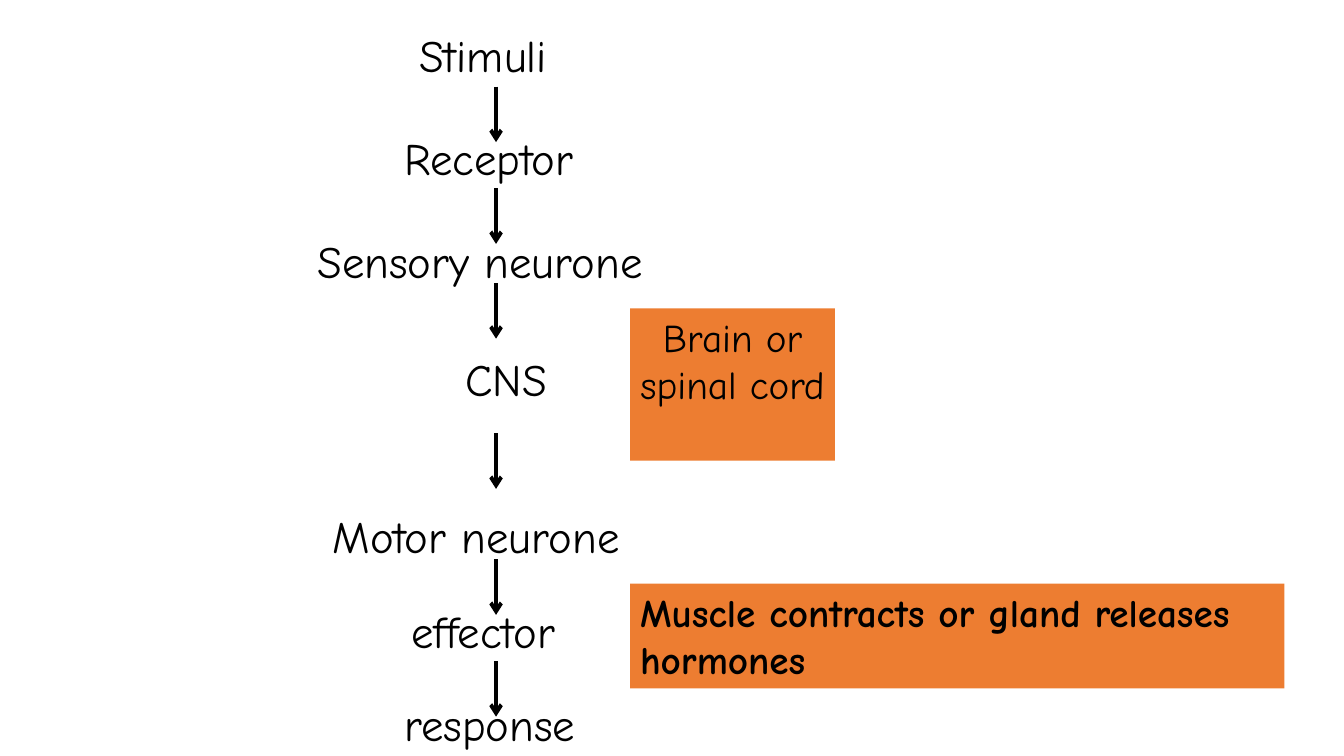
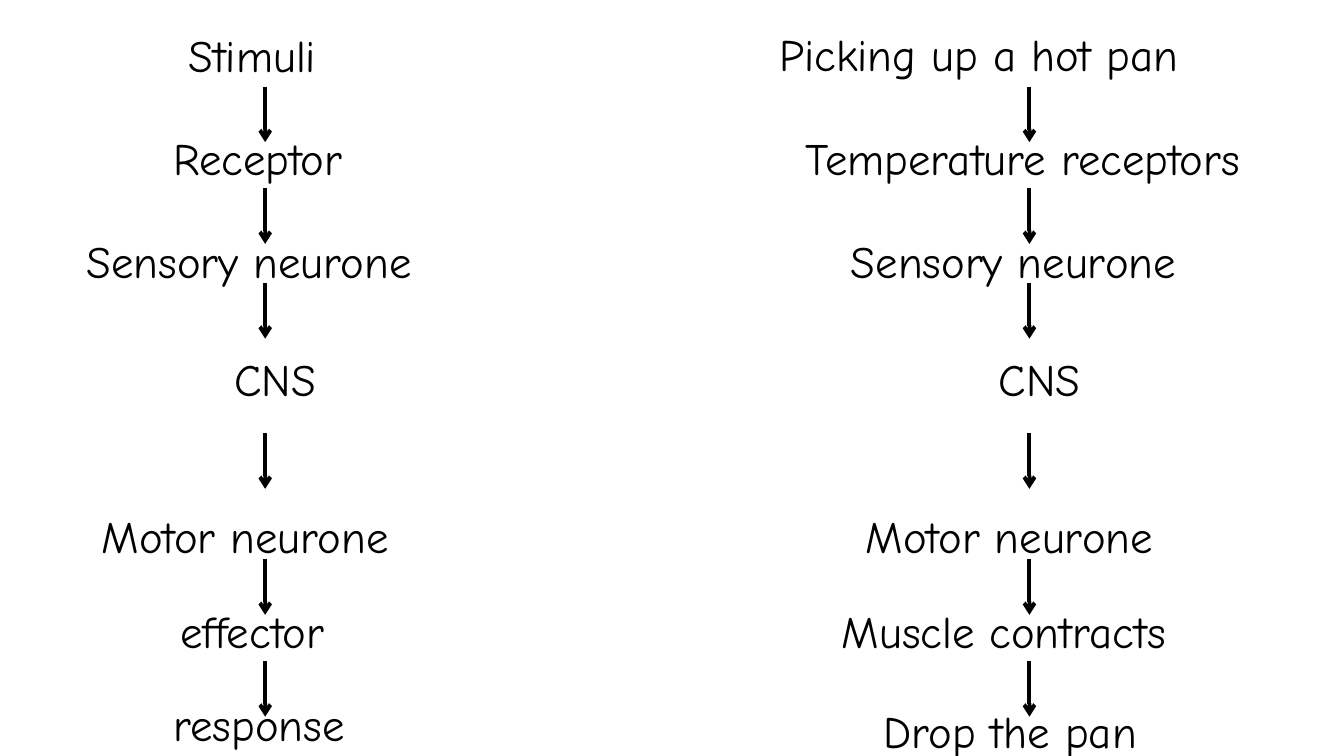
from lxml.etree import SubElement
from pptx import Presentation
from pptx.dml.color import RGBColor
from pptx.enum.shapes import MSO_CONNECTOR, MSO_SHAPE
from pptx.enum.text import MSO_ANCHOR, PP_ALIGN
from pptx.oxml.ns import qn
from pptx.util import Inches, Pt

BLACK = RGBColor(0x00, 0x00, 0x00)
ORANGE = RGBColor(0xED, 0x7D, 0x31)
FONT = "Comic Neue"
BLANK_LAYOUT = 6

STEP_HEIGHT = 0.64
ARROW_LENGTH = 0.55
ARROW_TOPS = (0.86, 1.87, 2.81, 4.3, 5.55, 6.56)

# Each step: text, left relative to the arrow axis, top, width, alignment
SENSORY = ("Sensory neurone", -1.87, 2.27, 4.22, PP_ALIGN.LEFT)
CNS = ("CNS", -2.75, 3.44, 5.7, PP_ALIGN.CENTER)
MOTOR = ("Motor neurone", -1.72, 5, 3.75, PP_ALIGN.LEFT)
REFLEX_STEPS = (
    ("Stimuli", -0.86, 0.23, 1.72, PP_ALIGN.LEFT),
    ("Receptor", -1.01, 1.25, 2.19, PP_ALIGN.LEFT),
    SENSORY,
    CNS,
    MOTOR,
    ("effector", -0.94, 5.94, 2.58, PP_ALIGN.LEFT),
    ("response", -1.01, 6.86, 2.73, PP_ALIGN.LEFT),
)
HOT_PAN_STEPS = (
    ("Picking up a hot pan", -2.58, 0.22, 5.15, PP_ALIGN.LEFT),
    ("Temperature receptors", -2.32, 1.25, 5.14, PP_ALIGN.LEFT),
    SENSORY,
    CNS,
    MOTOR,
    ("Muscle contracts", -1.96, 5.94, 4.91, PP_ALIGN.LEFT),
    ("Drop the pan", -1.55, 6.93, 3.59, PP_ALIGN.LEFT),
)


def write_text(shape, text, size, alignment, bold=False):
    frame = shape.text_frame
    frame.word_wrap = True
    frame.vertical_anchor = MSO_ANCHOR.TOP
    paragraph = frame.paragraphs[0]
    paragraph.text = text
    paragraph.alignment = alignment
    font = paragraph.runs[0].font
    font.color.rgb = BLACK
    for name, value in {"name": FONT, "size": Pt(size), "bold": bold}.items():
        setattr(font, name, value)


def add_step(slide, axis, step):
    text, offset, top, width, alignment = step
    box = slide.shapes.add_textbox(
        Inches(axis + offset), Inches(top), Inches(width), Inches(STEP_HEIGHT))
    write_text(box, text, 32, alignment)


def add_down_arrow(slide, axis, top):
    arrow = slide.shapes.add_connector(
        MSO_CONNECTOR.STRAIGHT, Inches(axis), Inches(top),
        Inches(axis), Inches(top + ARROW_LENGTH))
    arrow.line.color.rgb = BLACK
    arrow.line.width = Pt(2.75)
    SubElement(arrow.line._get_or_add_ln(), qn("a:tailEnd"), type="arrow")
    SubElement(arrow._element.spPr, qn("a:effectLst"))


def add_pathway(slide, axis, steps):
    """Draw a column of steps with its arrows on the vertical axis."""
    for step in steps:
        add_step(slide, axis, step)
    for top in ARROW_TOPS:
        add_down_arrow(slide, axis, top)


def add_note_box(slide, box, text, alignment, bold=False):
    shape = slide.shapes.add_shape(MSO_SHAPE.RECTANGLE, *map(Inches, box))
    shape.shadow.inherit = False
    shape.fill.solid()
    shape.fill.fore_color.rgb = ORANGE
    shape.line.fill.background()
    write_text(shape, text, 28, alignment, bold)


def add_reflex_slide(presentation):
    slide = presentation.slides.add_slide(presentation.slide_layouts[BLANK_LAYOUT])
    add_pathway(slide, 4.92, REFLEX_STEPS)
    add_note_box(slide, (6.25, 3.06, 2.03, 1.51), "Brain or spinal cord",
                 PP_ALIGN.CENTER)
    add_note_box(slide, (6.25, 5.79, 6.49, 1.04),
                 "Muscle contracts or gland releases hormones",
                 PP_ALIGN.LEFT, bold=True)


def add_example_slide(presentation):
    slide = presentation.slides.add_slide(presentation.slide_layouts[BLANK_LAYOUT])
    add_pathway(slide, 2.63, REFLEX_STEPS)
    add_pathway(slide, 10.21, HOT_PAN_STEPS)


def main():
    presentation = Presentation()
    presentation.slide_width = Inches(13.33)
    presentation.slide_height = Inches(7.5)
    add_reflex_slide(presentation)
    add_example_slide(presentation)
    presentation.save("out.pptx")


if __name__ == "__main__":
    main()
